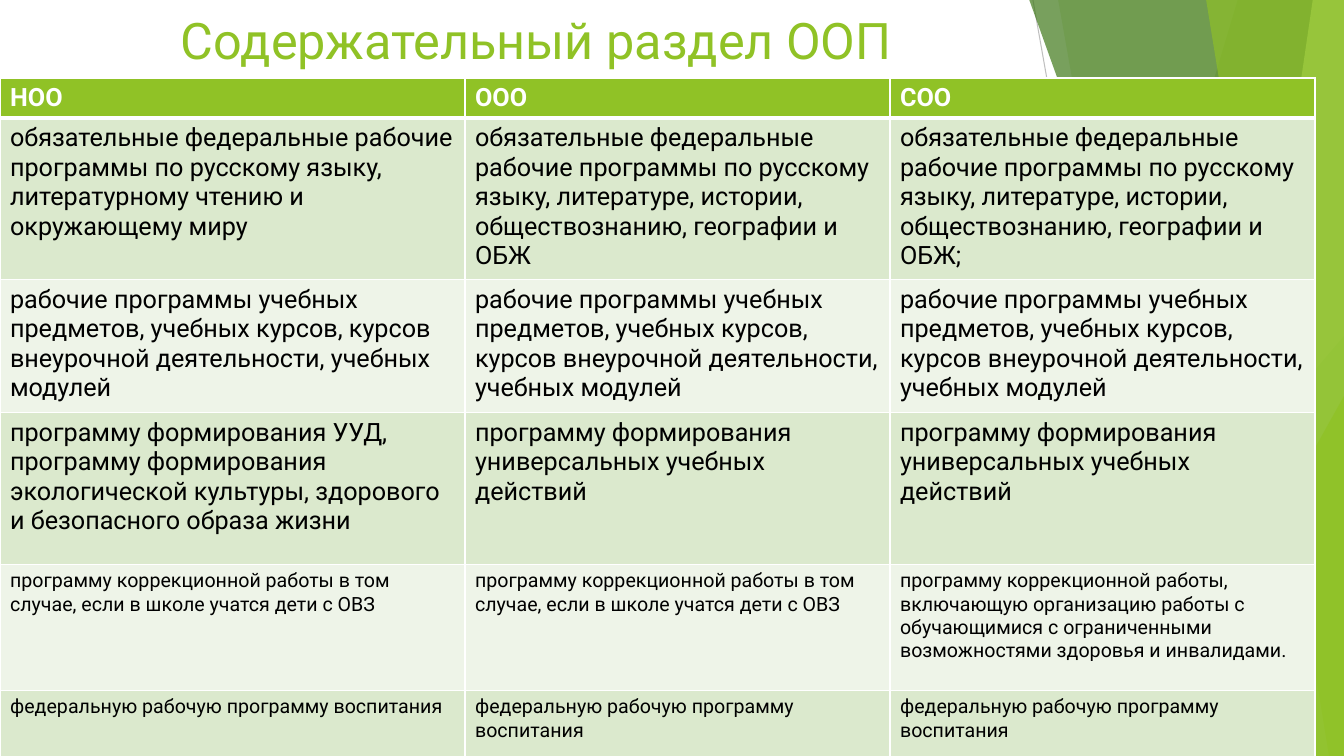
"""Build the slide comparing the content section of three school programmes."""
from lxml.etree import SubElement
from pptx import Presentation
from pptx.dml.color import RGBColor
from pptx.enum.shapes import MSO_CONNECTOR, MSO_SHAPE
from pptx.enum.text import MSO_ANCHOR
from pptx.oxml.ns import qn
from pptx.util import Pt

TITLE = "Содержательный раздел ООП"
SUBJECTS = "обязательные федеральные рабочие программы по русскому языку, "
BASIC_SUBJECTS = SUBJECTS + "литературе, истории, обществознанию, географии и ОБЖ"
COURSES = "рабочие программы учебных предметов, учебных курсов, курсов внеурочной деятельности, учебных модулей"
SKILLS = "программу формирования универсальных учебных действий"
SUPPORT = "программу коррекционной работы в том случае, если в школе учатся дети с ОВЗ"
UPBRINGING = "федеральную рабочую программу воспитания"

ROWS = [
    ("header", 40, ["НОО", "ООО", "СОО"]),
    ("body", 158, [SUBJECTS + "литературному чтению и окружающему миру",
                   BASIC_SUBJECTS, BASIC_SUBJECTS + ";"]),
    ("body", 133, [COURSES] * 3),
    ("body", 152, ["программу формирования УУД, программу формирования экологической культуры, "
                   "здорового и безопасного образа жизни", SKILLS, SKILLS]),
    ("small", 126, [SUPPORT, SUPPORT,
                    "программу коррекционной работы, включающую организацию работы с обучающимися "
                    "с ограниченными возможностями здоровья и инвалидами."]),
    ("small", 67, [UPBRINGING] * 3),
]
COLUMNS = [465, 425, 425]
TABLE_TOP = 78

THEME = {
    "font": "Roboto", "accent": "90C226", "leaf": "54A021", "forest": "3F7819",
    "lime": "C0E474", "white": "FFFFFF", "black": "000000",
    "silver": "BFBFBF", "mist": "D9D9D9", "stripes": ("EEF4E8", "DBE9CD"),
    "title": 36, "header": 18, "body": 18, "small": 14,
}

WIDTH, HEIGHT = 1344, 756
PX = 9144000 / 1008

RAYS = [((1033, 0), (1167, HEIGHT), "silver"), ((WIDTH, 406), (818, HEIGHT), "mist")]
FACETS = [
    ("band", (1238, 1012), "accent", 30),
    ("band", (1058, 1192), "accent", 20),
    ("triangle", (985, 336, 359, 1), "leaf", 72),
    ("band", (1029, 1301), "forest", 70),
    ("band", (1313, 1202), "lime", 70),
    ("band", (1206, 1329), "accent", 65),
    ("triangle", (1143, 396, 201, 1), "accent", 80),
    ("triangle", (0, 443, 49, 0), "accent", 85),
]


def px(*lengths):
    return [round(length * PX) for length in lengths]


def color(name):
    return RGBColor.from_string(THEME.get(name, name))


def add_ray(page, start, end, tone):
    ray = page.shapes.add_connector(MSO_CONNECTOR.STRAIGHT, *px(*start, *end))
    ray.line.color.rgb = color(tone)
    ray.line.width = Pt(0.75)
    SubElement(ray._element.spPr, qn("a:effectLst"))


def add_facet(page, kind, geometry, tone, opacity):
    if kind == "band":
        top_left, bottom_left = geometry
        outline = page.shapes.build_freeform(*px(top_left, -1))
        corners = [(WIDTH, -1), (WIDTH, HEIGHT), (bottom_left, HEIGHT)]
        outline.add_line_segments([px(*corner) for corner in corners], close=True)
        facet = outline.convert_to_shape()
    else:
        left, top, width, apex = geometry
        facet = page.shapes.add_shape(MSO_SHAPE.ISOSCELES_TRIANGLE,
                                      *px(left, top, width, HEIGHT - top))
        facet.adjustments[0] = apex
    facet.shadow.inherit = False
    facet.line.fill.background()
    facet.fill.solid()
    facet.fill.fore_color.rgb = color(tone)
    tint = next(facet._element.spPr.iter(qn("a:srgbClr")))
    SubElement(tint, qn("a:alpha"), val=str(opacity * 1000))


def write(frame, text, size, tone, bold=False):
    span = frame.paragraphs[0].add_run()
    span.text = text
    span.font.name = THEME["font"]
    span.font.size = Pt(THEME[size])
    span.font.bold = bold
    span.font.color.rgb = color(tone)


def set_borders(cell, widths):
    properties = cell._tc.get_or_add_tcPr()
    for side, width in widths.items():
        edge = SubElement(properties, qn(f"a:ln{side}"), w=str(Pt(width)))
        SubElement(SubElement(edge, qn("a:solidFill")), qn("a:srgbClr"), val=THEME["white"])


def add_programme_table(page):
    height = sum(row[1] for row in ROWS)
    table = page.shapes.add_table(len(ROWS), len(COLUMNS),
                                  *px(0, TABLE_TOP, sum(COLUMNS), height)).table
    for column, width in zip(table.columns, COLUMNS):
        column.width = px(width)[0]
    for index, (style, row_height, texts) in enumerate(ROWS):
        header = style == "header"
        table.rows[index].height = px(row_height)[0]
        for position, text in enumerate(texts):
            cell = table.cell(index, position)
            set_borders(cell, {"L": 1, "R": 1, "T": 3 if index == 1 else 1, "B": 3 if header else 1})
            cell.fill.solid()
            cell.fill.fore_color.rgb = color("accent" if header else THEME["stripes"][index % 2])
            write(cell.text_frame, text, style, "white" if header else "black", header)


def main():
    deck = Presentation()
    deck.slide_width, deck.slide_height = px(WIDTH, HEIGHT)
    page = deck.slides.add_slide(deck.slide_layouts[6])
    for ray in RAYS:
        add_ray(page, *ray)
    for facet in FACETS:
        add_facet(page, *facet)
    box = page.shapes.add_textbox(*px(171, 0, 1097, TABLE_TOP))
    box.text_frame.word_wrap = True
    box.text_frame.vertical_anchor = MSO_ANCHOR.MIDDLE
    write(box.text_frame, TITLE, "title", "accent")
    add_programme_table(page)
    deck.save("out.pptx")


if __name__ == "__main__":
    main()
